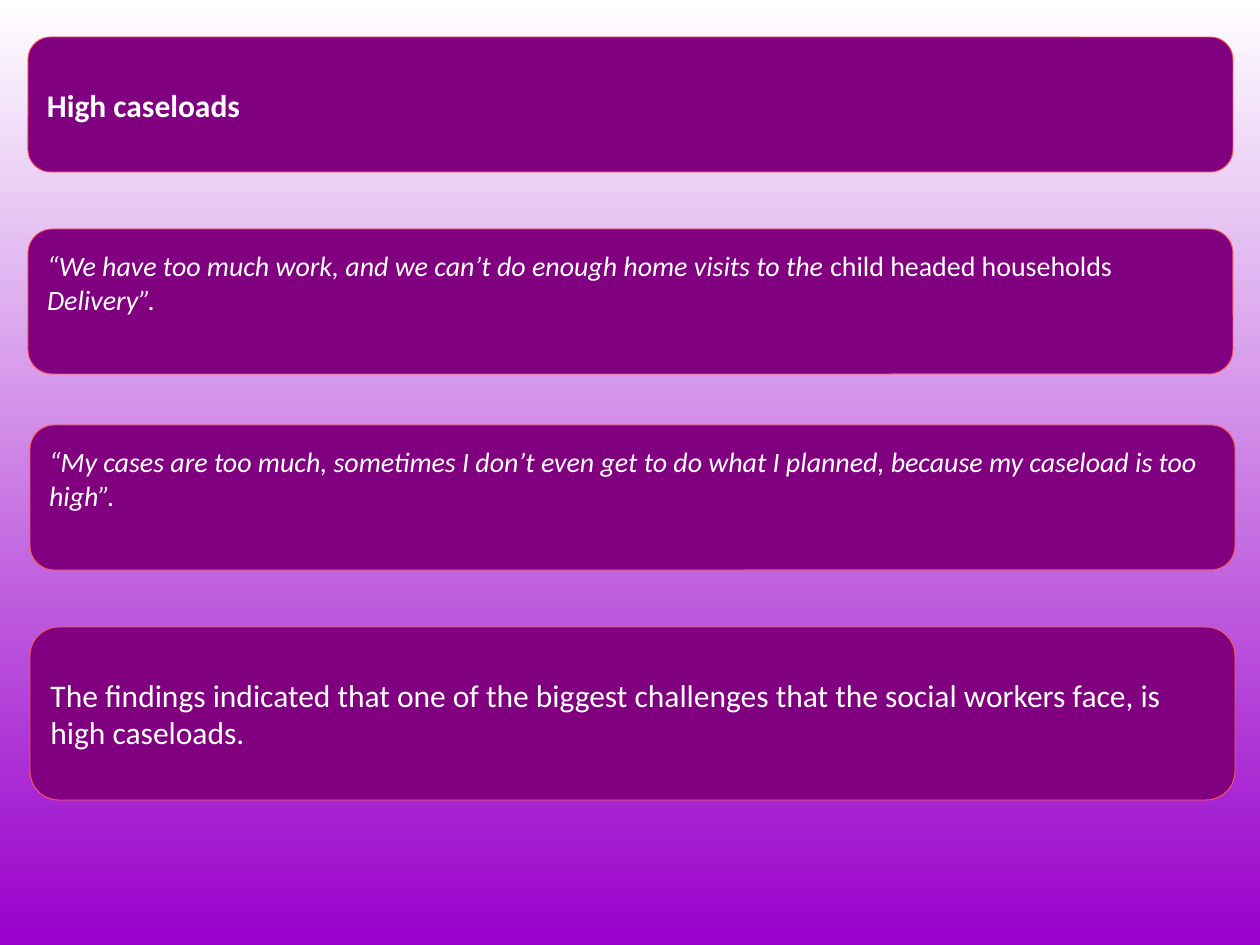
from dataclasses import dataclass

from pptx import Presentation
from pptx.dml.color import RGBColor
from pptx.enum import shapes, text
from pptx.util import Pt

EMU_PER_PX = 914400 / 126
WIDTH, HEIGHT = 1260, 945
BOX_WIDTH = 1205
INSET = 6
QUOTE_BOTTOM = 44  # lifts the quotes above the middle of their boxes


@dataclass(frozen=True)
class Theme:
    font: str = "Calibri"
    white: RGBColor = RGBColor(255, 255, 255)
    violet: RGBColor = RGBColor(0x99, 0x00, 0xCC)
    purple: RGBColor = RGBColor(0x80, 0x00, 0x80)
    coral: RGBColor = RGBColor(0xFF, 0x5B, 0x53)
    body_size: int = 18
    quote_size: int = 16
    line_width: float = 0.5


THEME = Theme()


def px(length):
    return round(length * EMU_PER_PX)


def set_values(target, values):
    for name, value in values.items():
        setattr(target, name, value)


def paint_background(page):
    fill = page.background.fill
    fill.gradient()
    fill.gradient_angle = 270
    for stop, color, position in zip(
        fill.gradient_stops, (THEME.white, THEME.violet), (0, 1)
    ):
        stop.color.rgb = color
        stop.position = position


def add_box(page, left, top, height):
    box = page.shapes.add_shape(
        shapes.MSO_SHAPE.ROUNDED_RECTANGLE,
        px(left), px(top), px(BOX_WIDTH), px(height),
    )
    box.shadow.inherit = False
    box.fill.solid()
    box.fill.fore_color.rgb = THEME.purple
    box.line.color.rgb = THEME.coral
    box.line.width = Pt(THEME.line_width)
    return box


def write(box, paragraphs, size, side=12, bottom=INSET):
    """Fill a box with paragraphs, each a list of (words, font values)."""
    frame = box.text_frame
    set_values(frame, {
        "word_wrap": True,
        "auto_size": text.MSO_AUTO_SIZE.NONE,
        "vertical_anchor": text.MSO_ANCHOR.MIDDLE,
        "margin_left": px(side),
        "margin_right": px(side),
        "margin_top": px(INSET),
        "margin_bottom": px(bottom),
    })
    for index, spans in enumerate(paragraphs):
        para = frame.add_paragraph() if index else frame.paragraphs[0]
        para.alignment = text.PP_ALIGN.LEFT
        for words, values in spans:
            span = para.add_run()
            span.text = words
            set_values(span.font, {"name": THEME.font, "size": Pt(size), **values})
            span.font.color.rgb = THEME.white


def add_title(page, words, left, top, height):
    add_box(page, left, top, height)
    title = page.shapes.title
    set_values(title, {
        "left": px(left), "top": px(top),
        "width": px(BOX_WIDTH), "height": px(height),
    })
    page.shapes._spTree.append(title._element)  # bring in front of its box
    write(title, [[(words, {"bold": True})]], THEME.body_size, side=19)


def main():
    deck = Presentation()
    deck.slide_width, deck.slide_height = px(WIDTH), px(HEIGHT)
    page = deck.slides.add_slide(deck.slide_layouts[5])
    paint_background(page)

    # Heading
    add_title(page, "High caseloads", 28, 37, 135)

    # Quotes
    italic, upright = {"italic": True}, {"italic": False}
    quotes = [
        (28, 229, [
            [("“We have too much work, and we can’t do enough home visits to the ", italic),
             ("child headed households", upright)],
            [("Delivery”.", italic)],
        ]),
        (30, 425, [
            [("“My cases are too much, sometimes I don’t even get to do what I planned, "
              "because my caseload is too high”.", italic)],
        ]),
    ]
    for left, top, paragraphs in quotes:
        box = add_box(page, left, top, 145)
        write(box, paragraphs, THEME.quote_size, bottom=QUOTE_BOTTOM)

    # Finding
    finding = ("The findings indicated that one of the biggest challenges "
               "that the social workers face, is high caseloads.")
    write(add_box(page, 30, 627, 173), [[(finding, {})]], THEME.body_size)

    deck.save("out.pptx")


if __name__ == "__main__":
    main()
